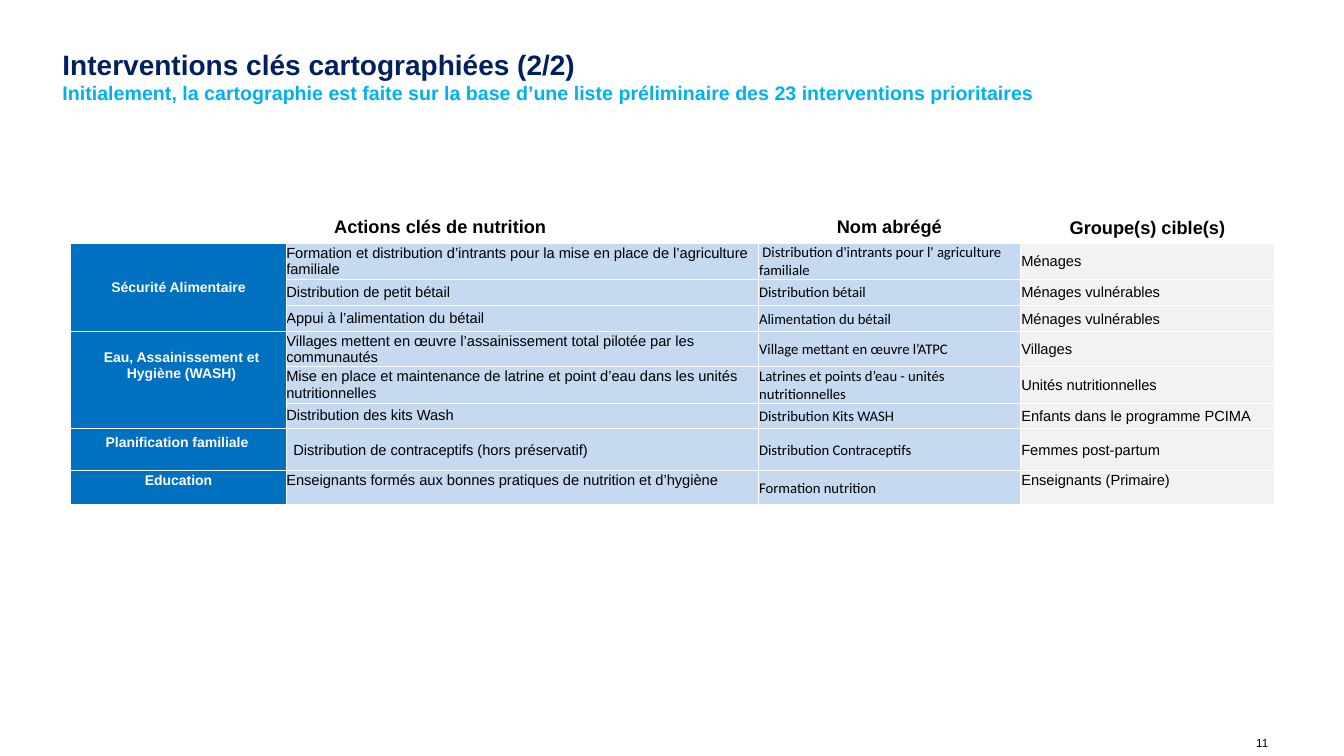
from dataclasses import dataclass

from lxml import etree
from pptx import Presentation
from pptx import util as u
from pptx.dml import color
from pptx.enum import text as tx
from pptx.oxml import ns

NAVY = color.RGBColor(0x00, 0x20, 0x60)
SKY = color.RGBColor(0x00, 0xB0, 0xF0)
BLUE = color.RGBColor(0x00, 0x70, 0xC0)
PALE_BLUE = color.RGBColor(0xC5, 0xD9, 0xF1)
PALE_GREY = color.RGBColor(0xF2, 0xF2, 0xF2)
WHITE = color.RGBColor(0xFF, 0xFF, 0xFF)
BLACK = color.RGBColor(0, 0, 0)


@dataclass(frozen=True)
class Style:
    size: float
    ink: color.RGBColor = BLACK
    font: str = "Arial"
    bold: bool = False
    align: tx.PP_ALIGN = tx.PP_ALIGN.LEFT
    fill: color.RGBColor | None = None


@dataclass(frozen=True)
class Margins:
    left: float = 0.01
    top: float = 0.01
    right: float = 0.01
    bottom: float = 0


@dataclass(frozen=True)
class Intervention:
    height: float
    action: str
    short_name: str
    target: str
    action_margins: Margins = Margins(0, 0, 0, 0)
    target_margins: Margins = Margins()


@dataclass(frozen=True)
class Sector:
    name: str
    interventions: tuple[Intervention, ...]
    margins: Margins = Margins()


HEADER = Style(13, bold=True, align=tx.PP_ALIGN.CENTER)
SECTOR = Style(10, WHITE, bold=True, align=tx.PP_ALIGN.CENTER, fill=BLUE)
ACTION = Style(10.5, fill=PALE_BLUE)
SHORT_NAME = Style(10.5, font="Calibri", fill=PALE_BLUE)
TARGET = Style(10.5, fill=PALE_GREY)
HEADLINE = Style(20, NAVY, bold=True)
SUBTITLE = Style(14, SKY, bold=True)
PAGE_NUMBER = Style(8.3)

COLUMN_WIDTHS = (2.14, 4.68, 2.6, 2.52)
HEADER_HEIGHT = 0.26
HEADERS = (
    ("", Margins()),
    ("Actions clés de nutrition", Margins(0, 0, 1.63, 0)),
    ("Nom abrégé", Margins(0, 0, 0, 0)),
    ("Groupe(s) cible(s)", Margins()),
)
SECTORS = (
    Sector("Sécurité Alimentaire", (
        Intervention(
            0.35,
            "Formation et distribution d’intrants pour la mise en place de l’agriculture familiale",
            " Distribution d'intrants pour l' agriculture familiale", "Ménages"),
        Intervention(0.26, "Distribution de petit bétail", "Distribution bétail",
                     "Ménages vulnérables"),
        Intervention(0.26, "Appui à l’alimentation du bétail", "Alimentation du bétail",
                     "Ménages vulnérables"),
    )),
    Sector("Eau, Assainissement et Hygiène (WASH)", (
        Intervention(
            0.33,
            "Villages mettent en œuvre l’assainissement total pilotée par les communautés",
            "Village mettant en œuvre l’ATPC", "Villages"),
        Intervention(
            0.35,
            "Mise en place et maintenance de latrine et point d’eau dans les unités nutritionnelles",
            "Latrines et points d’eau - unités nutritionnelles", "Unités nutritionnelles"),
        Intervention(0.25, "Distribution des kits Wash", "Distribution Kits WASH",
                     "Enfants dans le programme PCIMA"),
    ), Margins(left=0.07, bottom=0.3)),
    Sector("Planification familiale", (
        Intervention(0.42, "Distribution de contraceptifs (hors préservatif)",
                     "Distribution Contraceptifs", "Femmes post-partum",
                     action_margins=Margins(left=0.07)),
    ), Margins(right=0.04, bottom=0.15)),
    Sector("Education", (
        Intervention(
            0.33, "Enseignants formés aux bonnes pratiques de nutrition et d’hygiène",
            "Formation nutrition", "Enseignants (Primaire)",
            Margins(0, 0, 0, 0.15), Margins(bottom=0.15)),
    ), Margins(bottom=0.15)),
)


def add_run(paragraph, words: str, style: Style) -> None:
    paragraph.alignment = style.align
    run = paragraph.add_run()
    run.text = words
    run.font.name = style.font
    run.font.size = u.Pt(style.size)
    run.font.bold = style.bold
    run.font.color.rgb = style.ink


def set_margins(holder, margins: Margins) -> None:
    holder.margin_left = u.Inches(margins.left)
    holder.margin_top = u.Inches(margins.top)
    holder.margin_right = u.Inches(margins.right)
    holder.margin_bottom = u.Inches(margins.bottom)


def add_frame(slide, left: float, top: float, width: float, height: float,
              margins: Margins, wrap: bool):
    frame = slide.shapes.add_textbox(
        u.Inches(left), u.Inches(top), u.Inches(width), u.Inches(height)).text_frame
    set_margins(frame, margins)
    frame.word_wrap = wrap
    return frame


def set_borders(cell) -> None:
    properties = cell._tc.get_or_add_tcPr()
    for side in ("lnL", "lnR", "lnT", "lnB"):
        line = etree.SubElement(properties, ns.qn(f"a:{side}"), w=str(u.Pt(1)))
        solid = etree.SubElement(line, ns.qn("a:solidFill"))
        etree.SubElement(solid, ns.qn("a:srgbClr"), val=str(WHITE))


def fill_cell(cell, words: str, style: Style, margins: Margins) -> None:
    set_margins(cell, margins)
    cell.vertical_anchor = tx.MSO_ANCHOR.MIDDLE
    if style.fill is None:
        cell.fill.background()
    else:
        cell.fill.solid()
        cell.fill.fore_color.rgb = style.fill
    if words:
        add_run(cell.text_frame.paragraphs[0], words, style)


def add_interventions_table(slide) -> None:
    heights = [HEADER_HEIGHT] + [i.height for s in SECTORS for i in s.interventions]
    table = slide.shapes.add_table(
        len(heights), len(COLUMN_WIDTHS), u.Inches(0.7), u.Inches(2.1),
        u.Inches(sum(COLUMN_WIDTHS)), u.Inches(sum(heights))).table
    table.first_row = table.horz_banding = False
    for column, width in zip(table.columns, COLUMN_WIDTHS):
        column.width = u.Inches(width)
    for row, height in zip(table.rows, heights):
        row.height = u.Inches(height)
    for cell in table.iter_cells():
        set_borders(cell)
    for column, (words, margins) in enumerate(HEADERS):
        fill_cell(table.cell(0, column), words, HEADER, margins)
    row = 1
    for sector in SECTORS:
        sector_cell = table.cell(row, 0)
        last_row = row + len(sector.interventions) - 1
        if last_row > row:
            sector_cell.merge(table.cell(last_row, 0))
        fill_cell(sector_cell, sector.name, SECTOR, sector.margins)
        for item in sector.interventions:
            fill_cell(table.cell(row, 1), item.action, ACTION, item.action_margins)
            fill_cell(table.cell(row, 2), item.short_name, SHORT_NAME, Margins())
            fill_cell(table.cell(row, 3), item.target, TARGET, item.target_margins)
            row += 1


def main() -> None:
    deck = Presentation()
    deck.slide_width, deck.slide_height = u.Inches(13.33), u.Inches(7.5)
    slide = deck.slides.add_slide(deck.slide_layouts[6])
    title = add_frame(slide, 0.62, 0.18, 12.1, 0.91, Margins(0, 0.05, 0, 0.05), True)
    title.vertical_anchor = tx.MSO_ANCHOR.BOTTOM
    heading = title.paragraphs[0]
    add_run(heading, "Interventions clés cartographiées (2/2)", HEADLINE)
    heading.add_line_break()
    add_run(heading, "Initialement, la cartographie est faite sur la base d’une liste "
            "préliminaire des 23 interventions prioritaires", SUBTITLE)
    add_interventions_table(slide)
    page = add_frame(slide, 12.46, 7.3, 0.26, 0.14, Margins(0, 0, 0, 0), False)
    add_run(page.paragraphs[0], "11", PAGE_NUMBER)
    deck.save("out.pptx")


if __name__ == "__main__":
    main()
